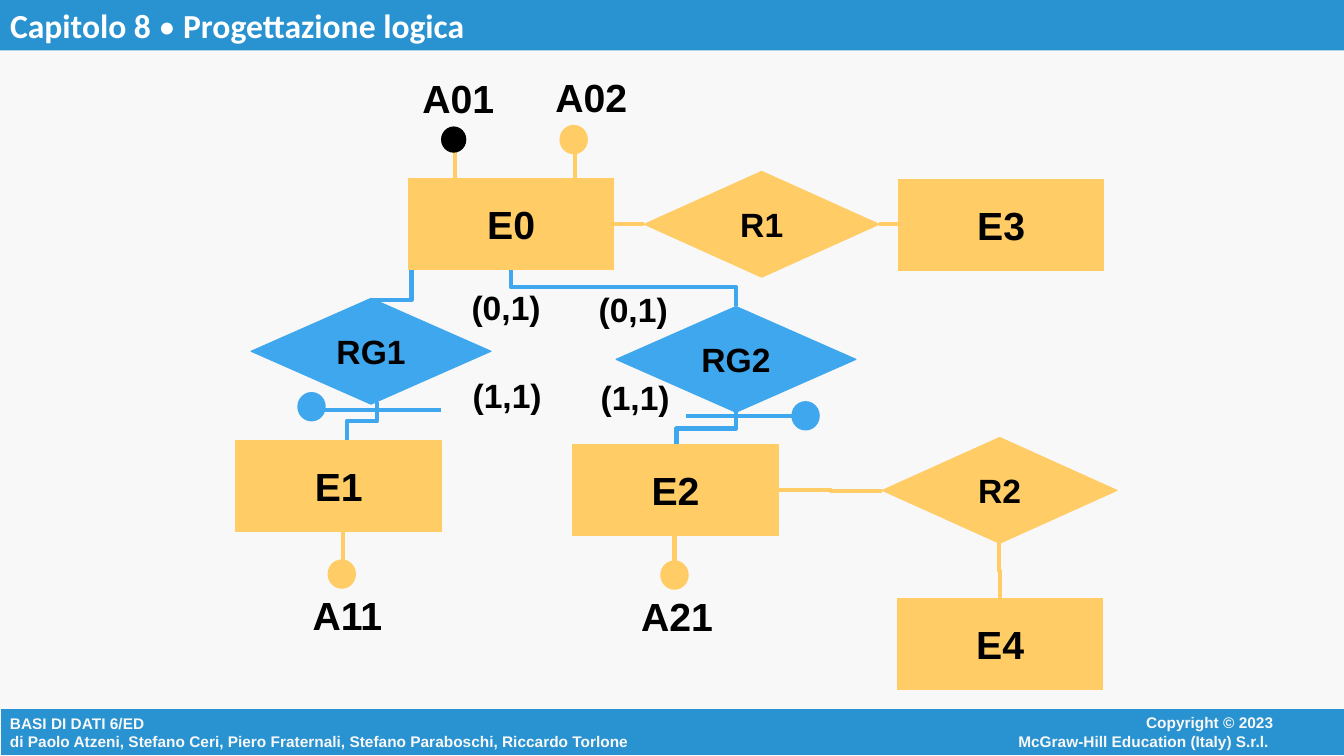
from dataclasses import dataclass

from lxml.etree import SubElement
from pptx import Presentation
from pptx.dml.color import RGBColor
from pptx.enum.shapes import MSO_CONNECTOR as Connector, MSO_SHAPE as Shape
from pptx.enum.text import MSO_ANCHOR as Anchor, MSO_AUTO_SIZE as AutoSize, PP_ALIGN as Align
from pptx.oxml.ns import qn
from pptx.util import Inches, Pt

COLORS = {
    "paper": "F8F8F8", "bar": "2993D1", "white": "FFFFFF", "black": "000000",
    "amber": "FFCC66", "blue": "3EA7EE",
}
BAR_WIDTH = 13.35
ENTITY_SIZE = (2.04, 0.9)
RELATION_SIZE = (2.33, 1.05)
GENERALIZATION_SIZE = (2.38, 1.05)
DOT_SIZE = (0.24, 0.25)


@dataclass
class Node:
    kind: Shape
    left: float
    top: float
    size: tuple[float, float]
    color: str
    text: str = ""
    font_size: int = 28
    line_width: float = 0.75


@dataclass
class Link:
    start: tuple[float, float]
    end: tuple[float, float]
    color: str = "amber"
    bend: str = ""  # "" straight, "h" leaves sideways, "v" leaves up or down
    middle: float = 0.5


@dataclass
class Label:
    text: str
    left: float
    top: float
    width: float
    height: float
    font_size: int


def entity(text: str, left: float, top: float) -> Node:
    return Node(Shape.RECTANGLE, left, top, ENTITY_SIZE, "amber", text)


def relation(text: str, left: float, top: float) -> Node:
    return Node(Shape.DIAMOND, left, top, RELATION_SIZE, "amber", text, 24)


def generalization(text: str, left: float, top: float) -> Node:
    return Node(Shape.DIAMOND, left, top, GENERALIZATION_SIZE, "blue", text, 24)


def dot(left: float, top: float, color: str = "amber", line_width: float = 3) -> Node:
    return Node(Shape.OVAL, left, top, DOT_SIZE, color, line_width=line_width)


LINKS = [
    # Generalization branches
    Link((3.44, 4.37), (3.74, 3.99), "blue", "v"),
    Link((6.71, 4.41), (7.3, 4.09), "blue", "v"),
    Link((3.67, 2.98), (4.08, 2.33), "blue", "v", 0),
    Link((7.3, 3.04), (5.07, 2.66), "blue", "v"),
    # External identifiers
    Link((6.8, 4.13), (7.97, 4.13), "blue"),
    Link((3.2, 4.07), (4.37, 4.07), "blue"),
    # Attributes
    Link((4.51, 1.51), (4.51, 2.26)),
    Link((5.7, 1.5), (5.7, 2.25)),
    Link((3.4, 5.23), (3.4, 5.65)),
    Link((6.69, 5.21), (6.69, 5.63)),
    # Relations
    Link((7.73, 4.86), (8.75, 4.87), bend="h"),
    Link((9.91, 5.39), (9.92, 5.94), bend="v"),
    Link((6.09, 2.22), (6.39, 2.22)),
    Link((8.72, 2.22), (8.91, 2.22)),
]
NODES = [
    generalization("RG2", 6.11, 3.04),
    generalization("RG1", 2.49, 2.96),
    dot(7.87, 4, "blue"),
    dot(2.97, 3.91, "blue"),
    entity("E0", 4.05, 1.77),
    entity("E1", 2.34, 4.37),
    entity("E2", 5.68, 4.41),
    entity("E3", 8.91, 1.78),
    entity("E4", 8.9, 5.94),
    relation("R1", 6.39, 1.7),
    relation("R2", 8.75, 4.34),
    dot(4.38, 1.26, "black", 0.75),
    dot(5.57, 1.26),
    dot(3.27, 5.57),
    dot(6.57, 5.58),
]
LABELS = [
    Label("A01", 4.09, 0.69, 0.91, 0.56, 28),
    Label("A02", 5.41, 0.68, 0.91, 0.56, 28),
    Label("A11", 3, 5.82, 0.89, 0.56, 28),
    Label("A21", 6.26, 5.83, 0.91, 0.56, 28),
    Label("(0,1)", 4.58, 2.8, 0.88, 0.5, 24),
    Label("(0,1)", 5.84, 2.82, 0.88, 0.5, 24),
    Label("(1,1)", 4.59, 3.67, 0.88, 0.5, 24),
    Label("(1,1)", 5.86, 3.69, 0.88, 0.5, 24),
]


def rgb(name: str) -> RGBColor:
    return RGBColor.from_string(COLORS[name])


def style_text(shape, size: float, color: str, align: Align, font: str = "Arial") -> None:
    for paragraph in shape.text_frame.paragraphs:
        paragraph.alignment = align
        for run in paragraph.runs:
            run.font.size, run.font.name, run.font.bold = Pt(size), font, True
            run.font.color.rgb = rgb(color)


def draw_node(slide, node: Node, line_color: str = ""):
    box = (node.left, node.top, *node.size)
    shape = slide.shapes.add_shape(node.kind, *map(Inches, box))
    shape.shadow.inherit = False
    shape.fill.solid()
    shape.fill.fore_color.rgb = rgb(node.color)
    shape.line.color.rgb = rgb(line_color or node.color)
    shape.line.width = Pt(node.line_width)
    if node.text:
        shape.text_frame.text = node.text
        shape.text_frame.vertical_anchor = Anchor.MIDDLE
        style_text(shape, node.font_size, "black", Align.CENTER)
    return shape


def draw_link(slide, link: Link) -> None:
    (x1, y1), (x2, y2) = link.start, link.end
    if link.bend == "v":
        # A quarter turn about the centre makes the elbow leave vertically
        center_x, center_y = (x1 + x2) / 2, (y1 + y2) / 2
        half_x, half_y = (y2 - y1) / 2, (x1 - x2) / 2
        x1, y1 = center_x - half_x, center_y - half_y
        x2, y2 = center_x + half_x, center_y + half_y
    kind = Connector.ELBOW if link.bend else Connector.STRAIGHT
    connector = slide.shapes.add_connector(kind, *map(Inches, (x1, y1, x2, y2)))
    connector.line.color.rgb = rgb(link.color)
    connector.line.width = Pt(3)
    properties = connector._element.spPr
    SubElement(properties, qn("a:effectLst"))
    if link.bend == "v":
        properties.find(qn("a:xfrm")).set("rot", "5400000")
    if link.bend:
        guides = properties.find(qn("a:prstGeom")).get_or_add_avLst()
        SubElement(guides, qn("a:gd"), name="adj1", fmla=f"val {round(link.middle * 100000)}")


def draw_label(slide, label: Label, color: str = "black", align: Align = Align.CENTER) -> None:
    box = (label.left, label.top, label.width, label.height)
    shape = slide.shapes.add_textbox(*map(Inches, box))
    frame = shape.text_frame
    # Narrow side margins and a growing box keep each label on one line
    frame.margin_left = frame.margin_right = Inches(0.05)
    frame.word_wrap = False
    frame.auto_size = AutoSize.SHAPE_TO_FIT_TEXT
    frame.text = label.text
    style_text(shape, label.font_size, color, align)


def draw_title(slide) -> None:
    title = slide.shapes.title
    title.left, title.top, title.width, title.height = map(Inches, (0, 0, BAR_WIDTH, 0.5))
    title.fill.solid()
    title.fill.fore_color.rgb = rgb("bar")
    title.text_frame.vertical_anchor = Anchor.TOP
    paragraph = title.text_frame.paragraphs[0]
    for text in ("Capitolo 8 ", "•", " Progettazione logica"):
        paragraph.add_run().text = text
    style_text(title, 24, "white", Align.LEFT, "Calibri")
    paragraph.runs[1].font.bold = False


def draw_footer(slide) -> None:
    bar = draw_node(slide, Node(Shape.RECTANGLE, 0, 7.03, (BAR_WIDTH, 0.47), "bar"), "paper")
    bar.text_frame.text = (
        "BASI DI DATI 6/ED\n"
        "di Paolo Atzeni, Stefano Ceri, Piero Fraternali, Stefano Paraboschi, Riccardo Torlone")
    bar.text_frame.vertical_anchor = Anchor.MIDDLE
    style_text(bar, 11, "paper", Align.LEFT)
    notice = "Copyright © 2023\nMcGraw-Hill Education (Italy) S.r.l. "
    draw_label(slide, Label(notice, 10, 7.03, 2.68, 0.46, 11), "paper", Align.RIGHT)


def main() -> None:
    presentation = Presentation()
    presentation.slide_width, presentation.slide_height = Inches(13.33), Inches(7.5)
    slide = presentation.slides.add_slide(presentation.slide_layouts[5])
    slide.background.fill.solid()
    slide.background.fill.fore_color.rgb = rgb("paper")
    draw_title(slide)
    draw_footer(slide)
    # Diagram, from back to front
    for link in LINKS:
        draw_link(slide, link)
    for node in NODES:
        draw_node(slide, node)
    for label in LABELS:
        draw_label(slide, label)
    presentation.save("out.pptx")


if __name__ == "__main__":
    main()
